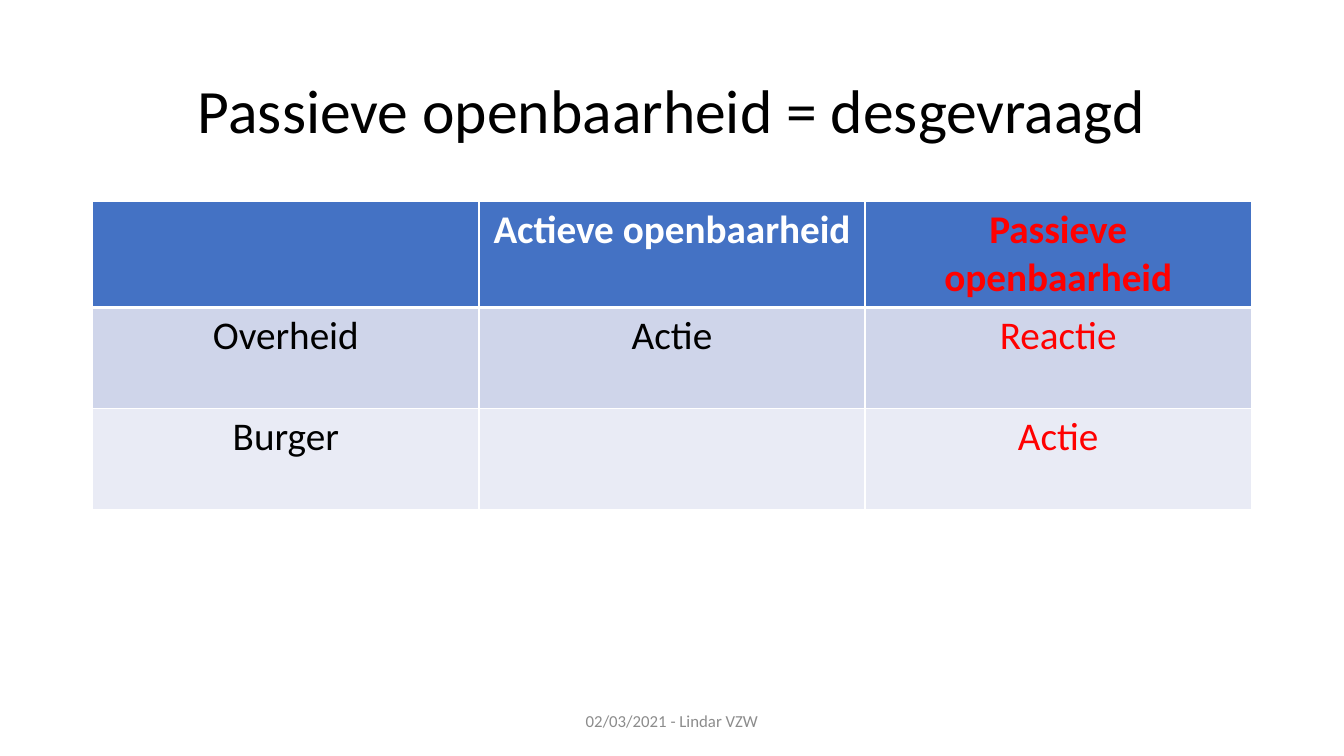
import pptx
import pptx.dml.color
import pptx.enum.text
import pptx.oxml
import pptx.oxml.ns
import pptx.util

RGBColor = pptx.dml.color.RGBColor
BLACK = RGBColor(0x00, 0x00, 0x00)
WHITE = RGBColor(0xFF, 0xFF, 0xFF)
RED = RGBColor(0xFF, 0x00, 0x00)
GREY = RGBColor(0x8C, 0x8C, 0x8C)
BLUE = RGBColor(0x44, 0x72, 0xC4)
BAND_DARK = RGBColor(0xCF, 0xD5, 0xEA)
BAND_LIGHT = RGBColor(0xE9, 0xEB, 0xF5)

WIDTH, HEIGHT = 13.33, 7.5
MARGIN = 0.92
CONTENT = WIDTH - 2 * MARGIN
ROW_HEIGHT = 1

COMPARISON = [
    ["", "Actieve openbaarheid", "Passieve openbaarheid"],
    ["Overheid", "Actie", "Reactie"],
    ["Burger", "", "Actie"],
]


class SlideBuilder:
    font = "Calibri"

    def __init__(self, presentation):
        self.slide = presentation.slides.add_slide(presentation.slide_layouts[5])

    def add_text(self, frame, text, size, color, bold=False):
        paragraph = frame.paragraphs[0]
        paragraph.alignment = pptx.enum.text.PP_ALIGN.CENTER
        run = paragraph.add_run()
        run.text = text
        run.font.name = self.font
        run.font.size = pptx.util.Pt(size)
        run.font.bold = bold
        run.font.color.rgb = color
        return paragraph

    def prepare(self, frame):
        frame.word_wrap = True
        frame.auto_size = pptx.enum.text.MSO_AUTO_SIZE.NONE
        frame.vertical_anchor = pptx.enum.text.MSO_ANCHOR.MIDDLE

    def title(self, text, top, height):
        shape = self.slide.shapes.title
        shape.left, shape.top, shape.width, shape.height = map(
            pptx.util.Inches, (MARGIN, top, CONTENT, height))
        self.prepare(shape.text_frame)
        self.add_text(shape.text_frame, text, 44, BLACK).line_spacing = 0.9

    def footer(self, text, top, width, height):
        shape = self.slide.shapes.add_textbox(*map(
            pptx.util.Inches, ((WIDTH - width) / 2, top, width, height)))
        self.prepare(shape.text_frame)
        self.add_text(shape.text_frame, text, 12, GREY)

    def border(self, cell, side, points):
        properties = cell._tc.get_or_add_tcPr()
        properties.append(pptx.oxml.parse_xml(
            f'<a:ln{side} {pptx.oxml.ns.nsdecls("a")} w="{pptx.util.Pt(points)}">'
            f'<a:solidFill><a:srgbClr val="{WHITE}"/></a:solidFill></a:ln{side}>'))

    def table(self, rows, top):
        shape = self.slide.shapes.add_table(len(rows), len(rows[0]), *map(
            pptx.util.Inches, (MARGIN, top, CONTENT, ROW_HEIGHT * len(rows))))
        for row, texts in enumerate(rows):
            for column, text in enumerate(texts):
                self.cell(shape.table.cell(row, column), row, column, text)

    def cell(self, cell, row, column, text):
        header = row == 0
        thick = {(0, "B"), (1, "T")}
        for side in "LRTB":
            self.border(cell, side, 3 if (row, side) in thick else 1)
        cell.fill.solid()
        cell.fill.fore_color.rgb = (BLUE, BAND_DARK, BAND_LIGHT)[row]
        if text:
            color = RED if column == 2 else WHITE if header else BLACK
            self.add_text(cell.text_frame, text, 28, color, header)


def main():
    presentation = pptx.Presentation()
    presentation.slide_width = pptx.util.Inches(WIDTH)
    presentation.slide_height = pptx.util.Inches(HEIGHT)
    builder = SlideBuilder(presentation)
    builder.title("Passieve openbaarheid = desgevraagd", 0.4, 1.45)
    builder.table(COMPARISON, 2)
    builder.footer("02/03/2021 - Lindar VZW", 6.95, 4.5, 0.4)
    presentation.save("out.pptx")


if __name__ == "__main__":
    main()
